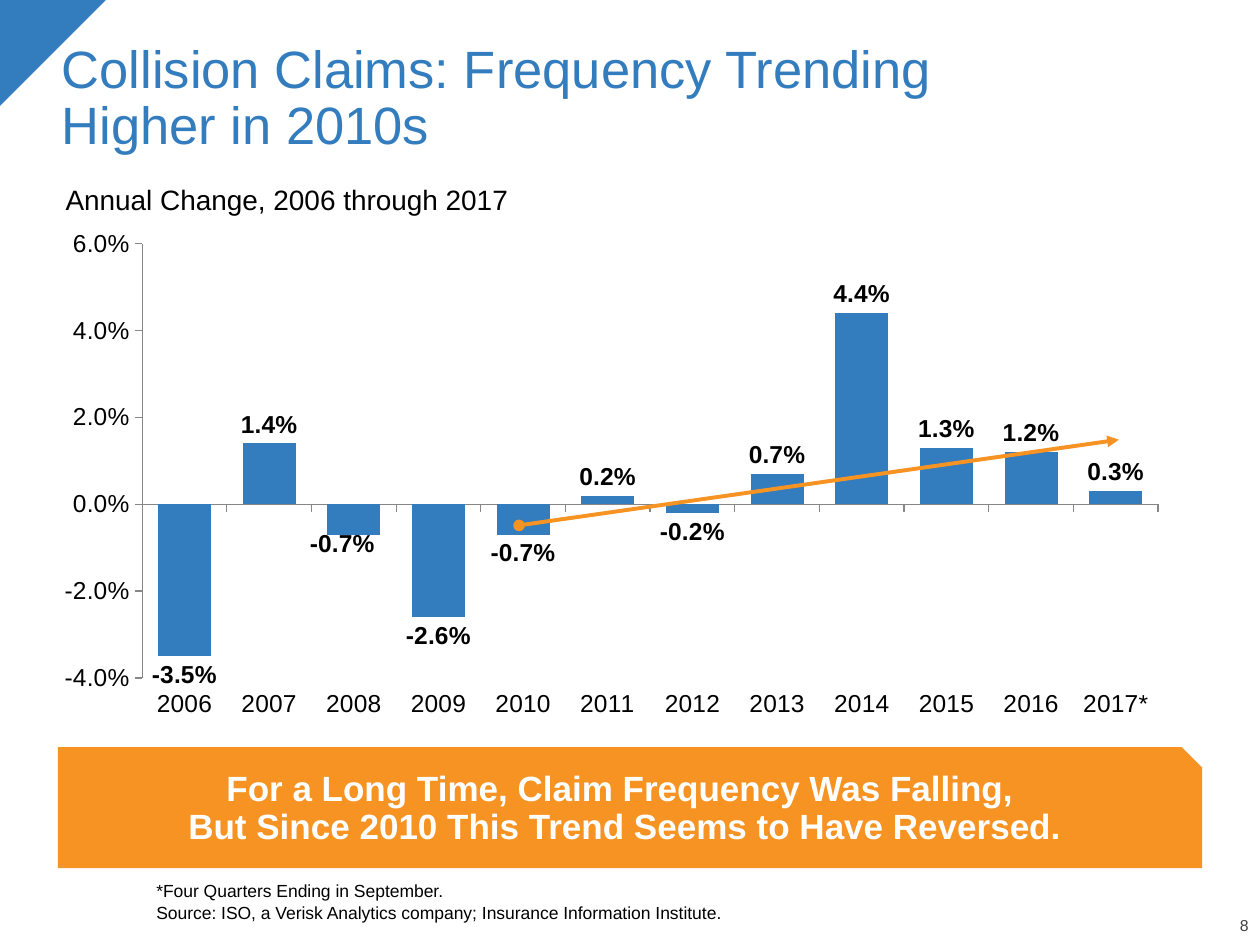
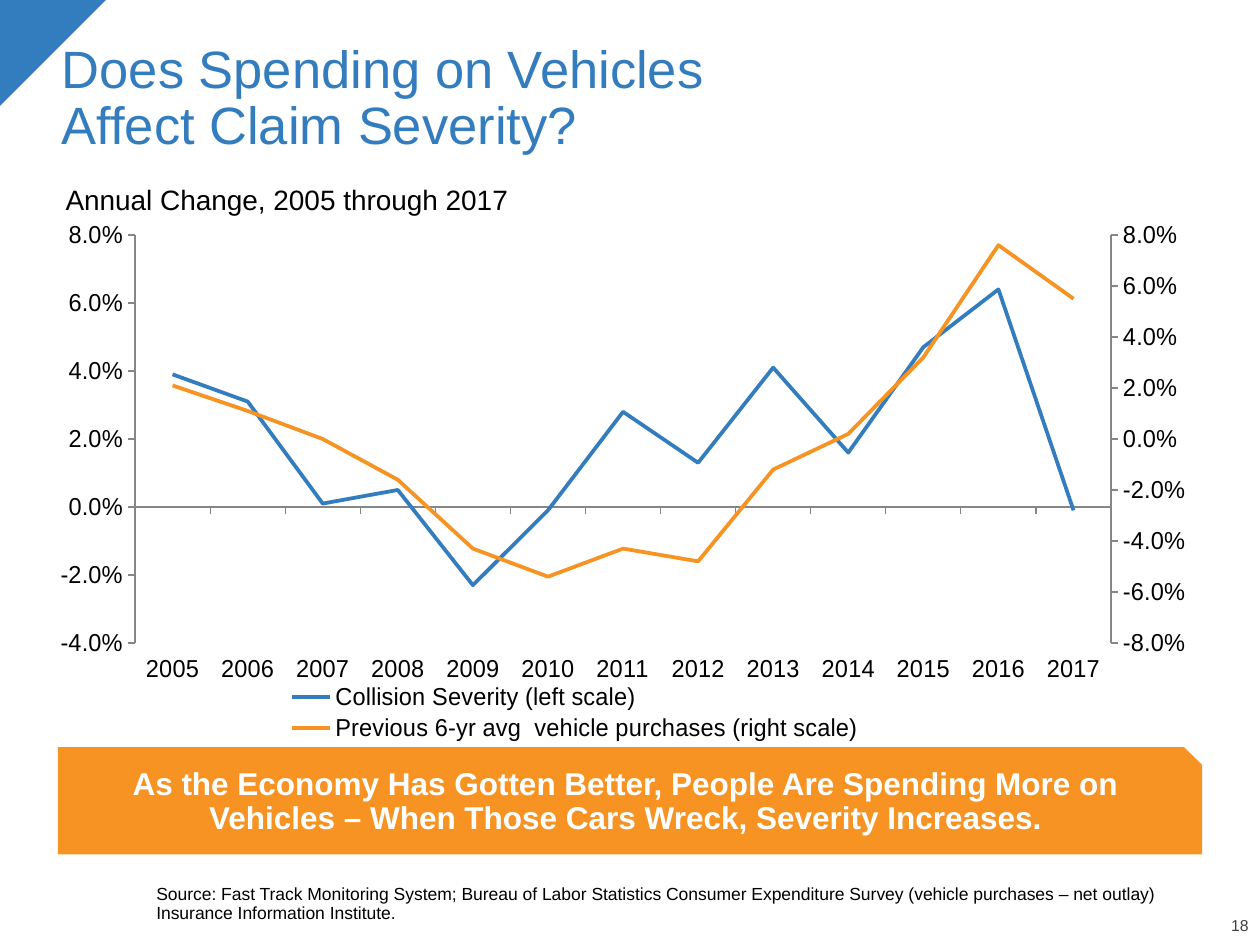
from copy import deepcopy
from dataclasses import dataclass

from lxml.etree import SubElement
from pptx import Presentation
from pptx.chart.data import CategoryChartData
from pptx.dml.color import RGBColor
from pptx.enum.chart import (XL_CHART_TYPE, XL_LABEL_POSITION, XL_LEGEND_POSITION,
                             XL_MARKER_STYLE, XL_TICK_LABEL_POSITION, XL_TICK_MARK)
from pptx.enum.shapes import MSO_CONNECTOR, MSO_SHAPE
from pptx.enum.text import MSO_ANCHOR, MSO_AUTO_SIZE, PP_ALIGN
from pptx.oxml import parse_xml
from pptx.oxml.ns import nsdecls, qn
from pptx.util import Inches, Pt


@dataclass(frozen=True)
class Theme:
    font: str = "Arial"
    blue: RGBColor = RGBColor(0x33, 0x7D, 0xBE)
    orange: RGBColor = RGBColor(0xF6, 0x93, 0x22)
    black: RGBColor = RGBColor(0, 0, 0)
    white: RGBColor = RGBColor(255, 255, 255)
    dark_gray: RGBColor = RGBColor(0x40, 0x40, 0x40)
    axis_gray: RGBColor = RGBColor(0x86, 0x86, 0x86)
    title_size: int = 30
    subtitle_size: int = 16
    chart_size: int = 14
    source_size: int = 10
    number_size: int = 9
    line_width: float = 2.25
    line_spacing: float = 0.9


theme = Theme()
deck = Presentation()
deck.slide_width, deck.slide_height = Inches(10), Inches(7.5)

# Grid of 100 columns and 75 rows
column, row = deck.slide_width / 100, deck.slide_height / 75


def cells(left, top, width, height):
    return int(left * column), int(top * row), int(width * column), int(height * row)


def set_chart_layout(parent, index, target="", **percentages):
    """Put a manual layout, in percent of the chart, among the children of parent."""
    for old_layout in parent.findall(qn("c:layout")):
        parent.remove(old_layout)
    layout = parse_xml(f"<c:layout {nsdecls('c')}><c:manualLayout/></c:layout>")
    settings = {}
    if target:
        settings["layoutTarget"] = target
    if "w" in percentages:
        settings.update(xMode="edge", yMode="edge")
    settings.update({name: str(value / 100) for name, value in percentages.items()})
    for name, value in settings.items():
        SubElement(layout[0], qn(f"c:{name}")).set("val", value)
    parent.insert(index, layout)


# Content of the two slides
pages = [
    dict(
        number="8",
        title="Collision Claims: Frequency Trending\vHigher in 2010s",
        subtitle="Annual Change, 2006 through 2017",
        banner="For a Long Time, Claim Frequency Was Falling, \v"
               "But Since 2010 This Trend Seems to Have Reversed.",
        banner_rows=9.6,
        banner_size=20,
        source="*Four Quarters Ending in September.\n"
               "Source: ISO, a Verisk Analytics company; Insurance Information Institute.",
        chart_type=XL_CHART_TYPE.COLUMN_CLUSTERED,
        categories=[str(year) for year in range(2006, 2017)] + ["2017*"],
        series={"Series 1": [-0.035, 0.014, -0.007, -0.026, -0.007, 0.002,
                             -0.002, 0.007, 0.044, 0.013, 0.012, 0.003]},
        axis_maximum=0.06,
        plot=dict(x=8.7, y=7.5, w=88.9, h=79.6),
    ),
    dict(
        number="18",
        title="Does Spending on Vehicles \vAffect Claim Severity?",
        subtitle="Annual Change, 2005 through 2017",
        banner="As the Economy Has Gotten Better, People Are Spending More on "
               "Vehicles – When Those Cars Wreck, Severity Increases.",
        banner_rows=8.5,
        banner_size=18,
        source="Source: Fast Track Monitoring System; Bureau of Labor Statistics "
               "Consumer Expenditure Survey (vehicle purchases – net outlay) "
               "Insurance Information Institute.",
        chart_type=XL_CHART_TYPE.LINE,
        categories=[str(year) for year in range(2005, 2018)],
        series={
            "Collision Severity (left scale)":
                [0.039, 0.031, 0.001, 0.005, -0.023, -0.001, 0.028,
                 0.013, 0.041, 0.016, 0.047, 0.064, -0.001],
            "Previous 6-yr avg  vehicle purchases (right scale)":
                [0.021, 0.011, 0, -0.016, -0.043, -0.054, -0.043,
                 -0.048, -0.012, 0.002, 0.032, 0.076, 0.055],
        },
        axis_maximum=0.08,
        plot=dict(x=8.4, y=5.9, w=88.9, h=74.8),
    ),
]

slides, charts = [], []
for page in pages:
    # Placeholders: title, subtitle and source from the comparison layout
    slide = deck.slides.add_slide(deck.slide_layouts[4])
    holders = {holder.placeholder_format.idx: holder for holder in slide.placeholders}
    title, subtitle, source = holders[0], holders[1], holders[3]
    for unused in (holders[2], holders[4]):
        unused.element.getparent().remove(unused.element)
    title.left, title.top, title.width, title.height = cells(3.9, 2.5, 92.5, 10.4)
    subtitle.left, subtitle.top, subtitle.width, subtitle.height = cells(4.2, 14.3, 92.5, 4.3)
    source.left, source.top, source.width, source.height = cells(12.4, 68.8, 84, 4.5)

    # Corner triangle, banner and slide number
    corner = slide.shapes.add_shape(MSO_SHAPE.RIGHT_TRIANGLE, *cells(0, 0, 8.4, 8.4))
    corner.rotation = 90
    slide.shapes[0].element.addprevious(corner.element)
    banner = slide.shapes.add_shape(MSO_SHAPE.SNIP_1_RECTANGLE,
                                    *cells(4.6, 59.3, 90.8, page["banner_rows"]))
    for shape, colour in ((corner, theme.blue), (banner, theme.orange)):
        shape.shadow.inherit = False
        shape.fill.solid()
        shape.fill.fore_color.rgb = colour
        shape.line.fill.background()
    number = slide.shapes.add_textbox(*cells(94.3, 72.9, 4.8, 1.3))

    # Wording and type
    for box, text, size, colour, align, anchor in (
        (title, page["title"], theme.title_size, theme.blue, PP_ALIGN.LEFT, MSO_ANCHOR.BOTTOM),
        (subtitle, page["subtitle"], theme.subtitle_size, theme.black, PP_ALIGN.LEFT, MSO_ANCHOR.TOP),
        (source, page["source"], theme.source_size, theme.black, PP_ALIGN.LEFT, MSO_ANCHOR.BOTTOM),
        (banner, page["banner"], page["banner_size"], theme.white, PP_ALIGN.CENTER, MSO_ANCHOR.MIDDLE),
        (number, page["number"], theme.number_size, theme.dark_gray, PP_ALIGN.RIGHT, MSO_ANCHOR.BOTTOM),
    ):
        frame = box.text_frame
        frame.text = text
        frame.word_wrap = True
        frame.auto_size = MSO_AUTO_SIZE.NONE
        frame.vertical_anchor = anchor
        if box in (source, number):
            frame.margin_left = frame.margin_right = frame.margin_top = frame.margin_bottom = 0
        for position, para in enumerate(frame.paragraphs):
            para.alignment = align
            para.line_spacing = theme.line_spacing
            para.space_before = Pt(2 if position else 0)
            for span in para.runs:
                span.font.name = theme.font
                span.font.size = Pt(size)
                span.font.bold = box is banner
                span.font.color.rgb = colour
    banner.text_frame.margin_bottom = Inches(0.1)

    # Chart with its shared axis style
    data = CategoryChartData(number_format="0.0%")
    data.categories = page["categories"]
    for name, values in page["series"].items():
        data.add_series(name, values)
    chart = slide.shapes.add_chart(page["chart_type"], *cells(3.4, 16.1, 90.7, 43.3), data).chart
    chart.has_title = False
    chart.has_legend = False
    chart.font.name = theme.font
    chart.font.size = Pt(theme.chart_size)
    chart.font.color.rgb = theme.black
    chart.plots[0].vary_by_categories = False
    for axis in (chart.category_axis, chart.value_axis):
        axis.has_major_gridlines = False
        axis.major_tick_mark = XL_TICK_MARK.OUTSIDE
        axis.minor_tick_mark = XL_TICK_MARK.NONE
        axis.format.line.color.rgb = theme.axis_gray
        axis.format.line.width = Pt(0.75)
    chart.category_axis.tick_label_position = XL_TICK_LABEL_POSITION.LOW
    chart.value_axis.minimum_scale = -0.04
    chart.value_axis.maximum_scale = page["axis_maximum"]
    chart.value_axis.major_unit = 0.02
    chart.value_axis.tick_labels.number_format = "0.0%"
    chart.value_axis.tick_labels.number_format_is_linked = False
    plot_area = chart.plots[0]._element.getparent()
    set_chart_layout(plot_area, 0, "inner", **page["plot"])
    slides.append(slide)
    charts.append(chart)

# Frequency columns and their labels
frequency_slide, frequency_chart = slides[0], charts[0]
frequency_chart.plots[0].gap_width = 60
frequency = frequency_chart.series[0] if hasattr(frequency_chart, "series") else frequency_chart.plots[0].series[0]
frequency.invert_if_negative = False
frequency.format.fill.solid()
frequency.format.fill.fore_color.rgb = theme.blue
labels = frequency.data_labels
labels.show_value = True
labels.number_format = "0.0%"
labels.number_format_is_linked = False
labels.position = XL_LABEL_POSITION.OUTSIDE_END
shifted_label = frequency.points[2].data_label
shifted_label.position = XL_LABEL_POSITION.OUTSIDE_END
for label in (labels, shifted_label):
    label.font.name = theme.font
    label.font.size = Pt(theme.chart_size)
    label.font.bold = True
    label.font.color.rgb = theme.black
shifted_element = labels._element.find(qn("c:dLbl"))
set_chart_layout(shifted_element, 1, x=-1, y=-1.8)

# Trend arrow over the columns
left, top, width, height = cells(41.2, 34.9, 47.6, 6.8)
trend = frequency_slide.shapes.add_connector(MSO_CONNECTOR.STRAIGHT,
                                             left, top + height, left + width, top)
trend.line.color.rgb = theme.orange
trend.line.width = Pt(theme.line_width)
trend_line = trend.line._get_or_add_ln()
SubElement(trend_line, qn("a:headEnd")).set("type", "oval")
SubElement(trend_line, qn("a:tailEnd")).set("type", "triangle")
SubElement(trend.element.spPr, qn("a:effectLst"))

# Severity lines and legend
severity_chart = charts[1]
for series, colour in zip(severity_chart.plots[0].series, (theme.blue, theme.orange)):
    series.smooth = False
    series.marker.style = XL_MARKER_STYLE.NONE
    series.format.line.color.rgb = colour
    series.format.line.width = Pt(theme.line_width)
severity_chart.has_legend = True
legend = severity_chart.legend
legend.position = XL_LEGEND_POSITION.BOTTOM
legend.include_in_layout = False
set_chart_layout(legend._element, 1, x=22.5, y=87.5, w=52, h=12)

# Second series on a right-hand axis
left_lines = severity_chart.plots[0]._element
right_lines = deepcopy(left_lines)
left_lines.remove(left_lines.findall(qn("c:ser"))[1])
right_lines.remove(right_lines.findall(qn("c:ser"))[0])
left_lines.addnext(right_lines)
category_id, value_id = "5001", "5002"
for axis_id, new_id in zip(right_lines.findall(qn("c:axId")), (category_id, value_id)):
    axis_id.set("val", new_id)
value_axis = severity_chart.value_axis._element
right_axis = deepcopy(value_axis)
hidden_axis = deepcopy(severity_chart.category_axis._element)
value_axis.addnext(right_axis)
right_axis.addnext(hidden_axis)
for axis, changes in (
    (right_axis, {"c:axId": value_id, "c:crossAx": category_id, "c:axPos": "r",
                  "c:crosses": "max", "c:scaling/c:min": "-0.08"}),
    (hidden_axis, {"c:axId": category_id, "c:crossAx": value_id, "c:delete": "1"}),
):
    for tag, value in changes.items():
        axis.find("/".join(qn(part) for part in tag.split("/"))).set("val", value)

deck.save("out.pptx")
